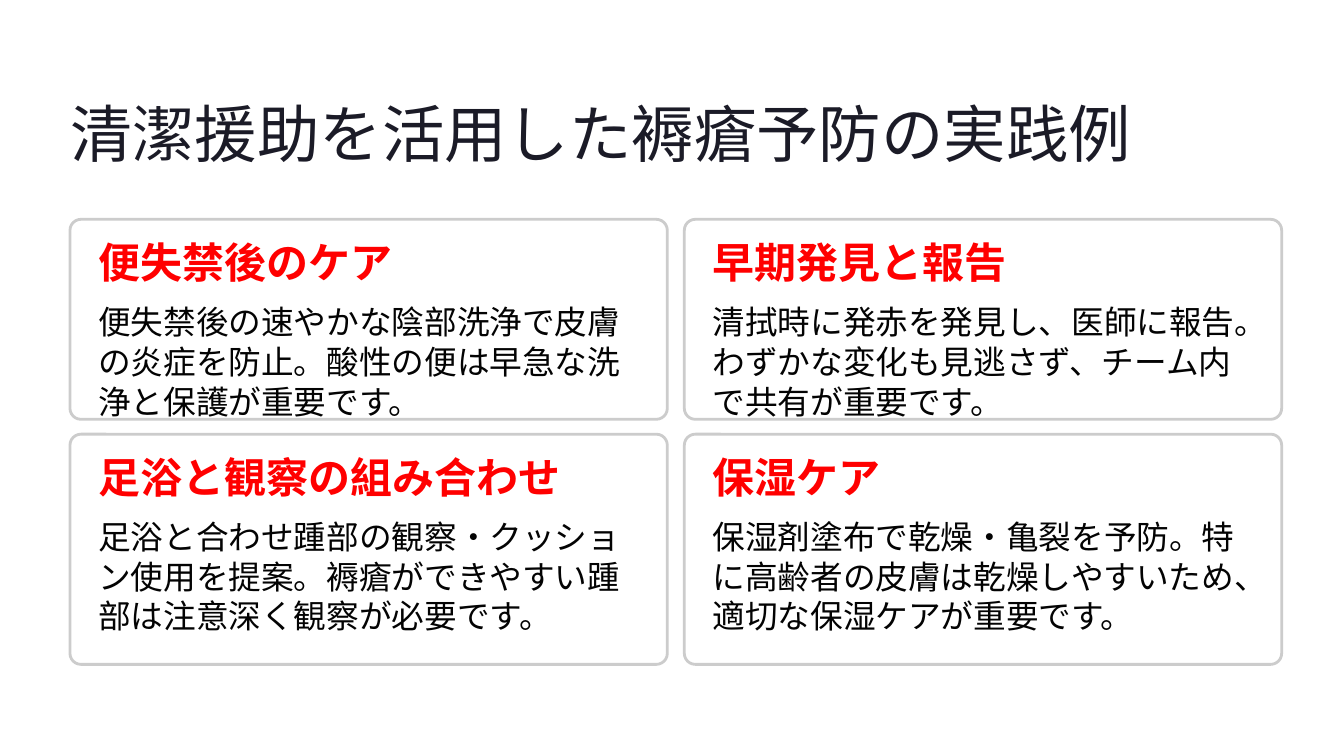
from dataclasses import dataclass

from lxml import etree
from pptx import Presentation
from pptx.dml.color import RGBColor
from pptx.dml.fill import FillFormat
from pptx.enum.shapes import MSO_SHAPE
from pptx.enum.text import MSO_ANCHOR, MSO_AUTO_SIZE, PP_ALIGN
from pptx.oxml.ns import qn
from pptx.slide import Slide
from pptx.text.text import TextFrame
from pptx.util import Pt

ROUND = MSO_SHAPE.ROUNDED_RECTANGLE
TOP = MSO_ANCHOR.TOP
FIXED = MSO_AUTO_SIZE.NONE
LEFT = PP_ALIGN.LEFT

EDGE, PITCH, WIDTH = 60, 526.6, 512
PAD, HEAD_Y, BODY_Y = 24.2, 24.5, 70.6
RADIUS = 9.4


@dataclass
class Row:
    top: float
    height: float
    body: float


@dataclass
class Card:
    head: str
    text: str
    width: float = 268.6


ROWS = [Row(188, 171.4, 68.4), Row(372.2, 197.3, 103)]
CARDS = [
    Card("便失禁後のケア", "便失禁後の速やかな陰部洗浄で皮膚の炎症を防止。酸性の便は早急な洗浄と保護が重要です。"),
    Card("早期発見と報告", "清拭時に発赤を発見し、医師に報告。わずかな変化も見逃さず、チーム内で共有が重要です。"),
    Card("足浴と観察の組み合わせ", "足浴と合わせ踵部の観察・クッション使用を提案。褥瘡ができやすい踵部は注意深く観察が必要です。", 295.2),
    Card("保湿ケア", "保湿剤塗布で乾燥・亀裂を予防。特に高齢者の皮膚は乾燥しやすいため、適切な保湿ケアが重要です。"),
]


def paint(fill: FillFormat, color: str) -> None:
    fill.solid()
    fill.fore_color.rgb = RGBColor.from_string(color)


def write(frame: TextFrame, text: str, *, size: float, font: str, color: str,
          line: float, bold: bool = False, wrap: bool = False) -> None:
    frame.auto_size = FIXED
    frame.word_wrap = wrap
    frame.vertical_anchor = TOP
    frame.margin_left = frame.margin_right = 0
    frame.margin_top = frame.margin_bottom = 0
    para = frame.paragraphs[0]
    para.alignment = LEFT
    para.line_spacing = Pt(line)
    run = para.add_run()
    run.text = text
    run.font.size = Pt(size)
    run.font.name = font
    run.font.bold = bold
    paint(run.font.fill, color)


def add_box(slide: Slide, left: float, top: float, width: float, height: float) -> TextFrame:
    return slide.shapes.add_textbox(Pt(left), Pt(top), Pt(width), Pt(height)).text_frame


def add_panel(slide: Slide, left: float, row: Row) -> None:
    panel = slide.shapes.add_shape(ROUND, Pt(left), Pt(row.top), Pt(WIDTH), Pt(row.height))
    panel.adjustments[0] = RADIUS / row.height
    panel.shadow.inherit = False
    paint(panel.fill, "FFFFFF")
    tint = panel.fill._xPr.find(qn("a:solidFill"))[0]
    etree.SubElement(tint, qn("a:alpha")).set("val", "95000")
    paint(panel.line.fill, "CCCCCC")
    panel.line.width = Pt(2.4)


def add_card(slide: Slide, card: Card, left: float, row: Row) -> None:
    add_panel(slide, left, row)
    head = add_box(slide, left + PAD, row.top + HEAD_Y, card.width, 33.8)
    write(head, card.head, size=36, font="Inter", color="FF0000", line=33.5, bold=True)
    body = add_box(slide, left + PAD, row.top + BODY_Y, 457.2, row.body)
    write(body, card.text, size=28, font="Cabin", color="030303", line=34, wrap=True)


def main() -> None:
    deck = Presentation()
    deck.slide_width, deck.slide_height = Pt(1152), Pt(648)
    slide = deck.slides.add_slide(deck.slide_layouts[5])
    title = slide.shapes.title
    title.left, title.top = Pt(EDGE), Pt(78.5)
    title.width, title.height = Pt(912), Pt(67)
    write(title.text_frame, "清潔援助を活用した褥瘡予防の実践例",
          size=53.5, font="Inter", color="1B1B27", line=67)
    for index, card in enumerate(CARDS):
        row, col = divmod(index, 2)
        add_card(slide, card, EDGE + col * PITCH, ROWS[row])
    deck.save("out.pptx")


if __name__ == "__main__":
    main()
